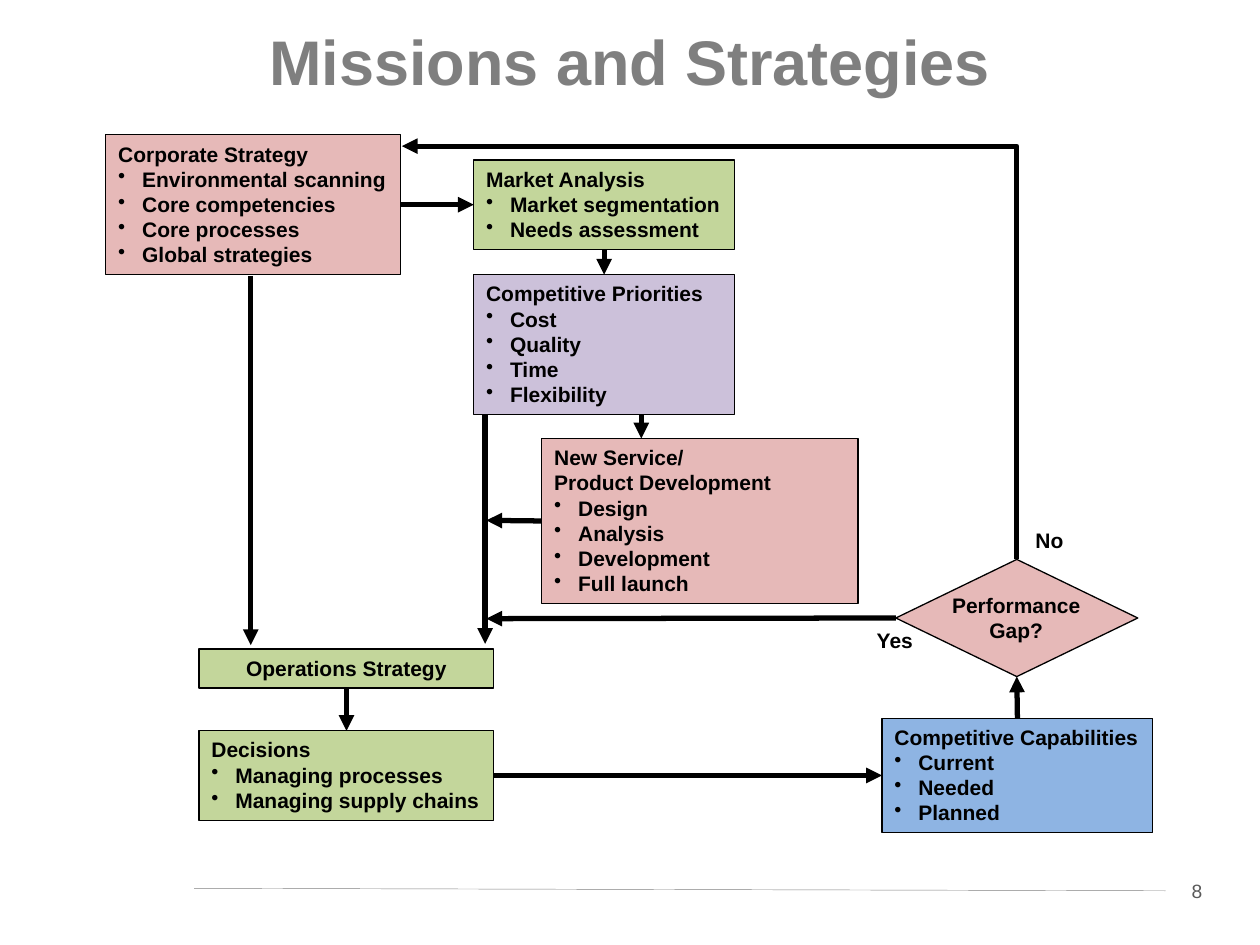
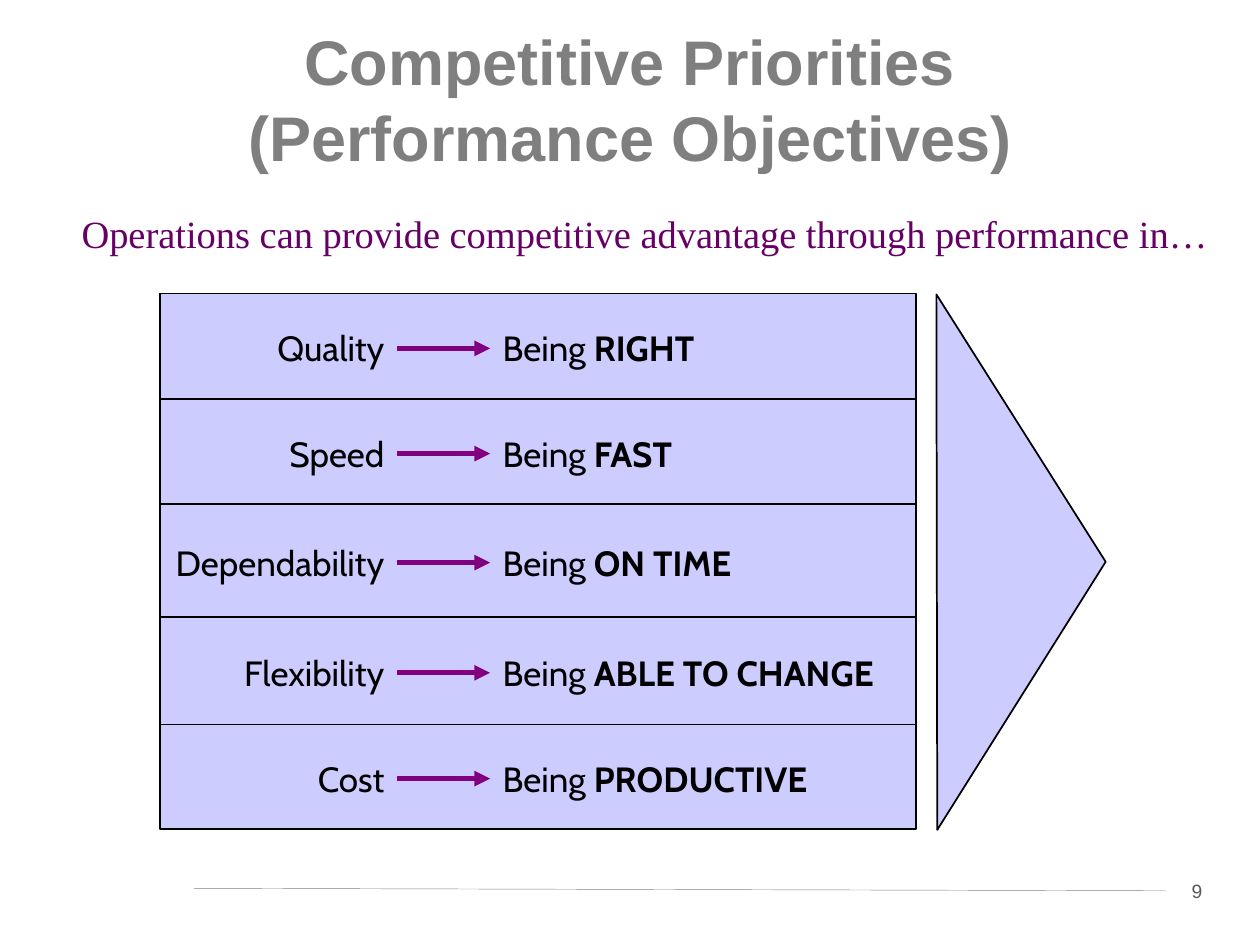
from lxml import etree
from pptx import Presentation
from pptx.dml.color import RGBColor
from pptx.enum.shapes import MSO_CONNECTOR, MSO_SHAPE
from pptx.enum.text import MSO_ANCHOR, MSO_AUTO_SIZE, PP_ALIGN
from pptx.oxml.ns import qn
from pptx.util import Inches, Pt

RECTANGLE = MSO_SHAPE.RECTANGLE
DIAMOND = MSO_SHAPE.DIAMOND
TRIANGLE = MSO_SHAPE.ISOSCELES_TRIANGLE
STRAIGHT = MSO_CONNECTOR.STRAIGHT
LEFT, CENTER, RIGHT = PP_ALIGN.LEFT, PP_ALIGN.CENTER, PP_ALIGN.RIGHT
TOP_SIDE, LEFT_SIDE, BOTTOM_SIDE, RIGHT_SIDE = range(4)

BLACK = RGBColor(0x00, 0x00, 0x00)
WHITE = RGBColor(0xFF, 0xFF, 0xFF)
TITLE_GRAY = RGBColor(0x7F, 0x7F, 0x7F)
RULE_GRAY = RGBColor(0x80, 0x80, 0x80)
NUMBER_GRAY = RGBColor(0x59, 0x59, 0x59)
ROSE = RGBColor(0xE6, 0xB9, 0xB8)
GREEN = RGBColor(0xC3, 0xD6, 0x9B)
LILAC = RGBColor(0xCC, 0xC1, 0xDA)
BLUE = RGBColor(0x8E, 0xB4, 0xE3)
LAVENDER = RGBColor(0xCC, 0xCC, 0xFF)
PURPLE = RGBColor(0x80, 0x00, 0x80)
PLUM = RGBColor(0x66, 0x00, 0x66)

TITLE_ONLY = 5
HEADING_FONT, ROW_FONT, LEAD_FONT = "Arial", "Cabin", "Times New Roman"
BULLET_INDENT = Inches(0.19)


def style_font(font, name, size, color, bold=False):
    font.name = name
    font.size = Pt(size)
    font.color.rgb = color
    font.bold = bold


def prepare_frame(frame):
    frame.word_wrap = True
    frame.auto_size = MSO_AUTO_SIZE.NONE
    frame.vertical_anchor = MSO_ANCHOR.TOP
    return frame


def write_line(shape, text, name, size, color, bold=False, align=LEFT):
    """Fill a shape with one paragraph and return that paragraph."""
    para = prepare_frame(shape.text_frame).paragraphs[0]
    para.text = text
    para.alignment = align
    for span in para.runs:
        style_font(span.font, name, size, color, bold)
    return para


def add_label(slide, area, text, name=HEADING_FONT, size=12, color=BLACK,
              bold=False, align=LEFT):
    box = slide.shapes.add_textbox(*map(Inches, area))
    return write_line(box, text, name, size, color, bold, align)


def add_block(slide, kind, area, fill, line_width):
    block = slide.shapes.add_shape(kind, *map(Inches, area))
    block.shadow.inherit = False
    block.fill.solid()
    block.fill.fore_color.rgb = fill
    if line_width:
        block.line.color.rgb = BLACK
        block.line.width = Pt(line_width)
    else:
        block.line.fill.background()
    return block


def add_list_block(slide, area, fill, headings, items):
    """Draw a framed box with bold heading lines above bulleted items."""
    block = add_block(slide, RECTANGLE, area, fill, 0.75)
    frame = prepare_frame(block.text_frame)
    lines = headings + items
    frame.text = "\n".join(lines)
    for index, para in enumerate(frame.paragraphs):
        para.alignment = LEFT
        if index >= len(headings):
            properties = para._p.get_or_add_pPr()
            properties.set("marL", str(BULLET_INDENT))
            properties.set("indent", str(-BULLET_INDENT))
            etree.SubElement(properties, qn("a:buChar")).set("char", "•")
        style_font(para.runs[0].font, HEADING_FONT, 12, BLACK, True)
    return block


def add_arrowhead(shape):
    line = shape.line._get_or_add_ln()
    etree.SubElement(line, qn("a:tailEnd")).set("type", "triangle")


def add_line(slide, start, end, color, width):
    """Join two ends, each a point (x, y) or a pair (shape, side)."""
    points = [end_point if isinstance(end_point[0], (int, float)) else (0, 0)
              for end_point in (start, end)]
    line = slide.shapes.add_connector(
        STRAIGHT, *(Inches(value) for point in points for value in point))
    for end_point, connect in ((start, line.begin_connect),
                               (end, line.end_connect)):
        if not isinstance(end_point[0], (int, float)):
            connect(*end_point)
    line.line.color.rgb = color
    line.line.width = Pt(width)
    etree.SubElement(line._element.spPr, qn("a:effectLst"))
    return line


def add_arrow(slide, start, end, color=BLACK):
    add_arrowhead(add_line(slide, start, end, color, 3))


def add_bent_arrow(slide, points):
    corners = [(Inches(x), Inches(y)) for x, y in points]
    builder = slide.shapes.build_freeform(*corners[0])
    builder.add_line_segments(corners[1:], close=False)
    arrow = builder.convert_to_shape()
    arrow.shadow.inherit = False
    arrow.fill.background()
    arrow.line.color.rgb = BLACK
    arrow.line.width = Pt(3)
    add_arrowhead(arrow)


def add_page(deck, title, number):
    """Add a slide with the shared title style, footer rule and page number."""
    page = deck.slides.add_slide(deck.slide_layouts[TITLE_ONLY])
    heading = page.shapes.title
    heading.left, heading.top = Inches(0.53), Inches(0.13)
    heading.width, heading.height = Inches(8.94), Inches(1.01)
    write_line(heading, title, HEADING_FONT, 36, TITLE_GRAY, True, CENTER)
    number_box = add_block(page, RECTANGLE, (9.25, 6.93, 0.5, 0.29), WHITE, 0)
    write_line(number_box, str(number), HEADING_FONT, 11, NUMBER_GRAY,
               align=CENTER)
    add_line(page, (1.54, 7.05), (9.25, 7.07), RULE_GRAY, 0.25)
    return page


def build_strategy_flow(deck):
    page = add_page(deck, "Missions and Strategies", 8)
    corporate = add_list_block(
        page, (0.84, 1.07, 2.34, 1.11), ROSE, ["Corporate Strategy"],
        ["Environmental scanning", "Core competencies", "Core processes",
         "Global strategies"])
    market = add_list_block(
        page, (3.76, 1.27, 2.07, 0.71), GREEN, ["Market Analysis"],
        ["Market segmentation", "Needs assessment"])
    priorities = add_list_block(
        page, (3.76, 2.18, 2.07, 1.11), LILAC, ["Competitive Priorities"],
        ["Cost", "Quality", "Time", "Flexibility"])
    development = add_list_block(
        page, (4.3, 3.48, 2.51, 1.31), ROSE,
        ["New Service/", "Product Development"],
        ["Design", "Analysis", "Development", "Full launch"])
    operations = add_block(page, RECTANGLE, (1.58, 5.15, 2.34, 0.31), GREEN,
                           0.75)
    write_line(operations, "Operations Strategy", HEADING_FONT, 12, BLACK,
               True, CENTER)
    decisions = add_list_block(
        page, (1.58, 5.8, 2.34, 0.71), GREEN, ["Decisions"],
        ["Managing processes", "Managing supply chains"])
    capabilities = add_list_block(
        page, (7, 5.7, 2.15, 0.91), BLUE, ["Competitive Capabilities"],
        ["Current", "Needed", "Planned"])
    gap = add_block(page, DIAMOND, (7.11, 4.44, 1.92, 0.93), ROSE, 0.75)
    add_label(page, (7.34, 4.65, 1.45, 0.5), "Performance Gap?", bold=True,
              align=CENTER)
    add_label(page, (8.12, 4.14, 0.5, 0.3), "No", bold=True)
    add_label(page, (6.86, 4.93, 0.6, 0.3), "Yes", bold=True)

    for start, end in (
        ((corporate, RIGHT_SIDE), (market, LEFT_SIDE)),
        ((market, BOTTOM_SIDE), (priorities, TOP_SIDE)),
        ((5.09, 3.29), (5.09, 3.48)),
        ((development, LEFT_SIDE), (3.86, 4.13)),
        ((gap, LEFT_SIDE), (3.86, 4.91)),
        ((1.99, 2.19), (1.99, 5.12)),
        ((3.85, 3.29), (3.85, 5.11)),
        ((operations, BOTTOM_SIDE), (decisions, TOP_SIDE)),
        ((decisions, RIGHT_SIDE), (capabilities, LEFT_SIDE)),
        ((capabilities, TOP_SIDE), (gap, BOTTOM_SIDE)),
    ):
        add_arrow(page, start, end)
    add_bent_arrow(page, [(8.07, 4.44), (8.07, 1.16), (3.19, 1.16)])


def add_objective_row(page, top, height, objective, result):
    add_block(page, RECTANGLE, (1.27, top, 6, height), LAVENDER, 1)
    text_top = top + (height - 0.41) / 2
    add_label(page, (0.64, text_top, 2.51, 0.43), objective, ROW_FONT, 20,
              align=RIGHT)
    para = add_label(page, (3.89, text_top, 3.25, 0.43), "Being", ROW_FONT, 20)
    emphasis = para.add_run()
    emphasis.text = f" {result}"
    style_font(emphasis.font, ROW_FONT, 20, BLACK, True)
    arrow_y = text_top + 0.22
    add_arrow(page, (3.15, arrow_y), (3.89, arrow_y), PURPLE)


def build_objectives(deck):
    page = add_page(deck,
                    "Competitive Priorities\v(Performance Objectives)", 9)
    add_label(page, (0.35, 1.62, 9.53, 0.47),
              "Operations can provide competitive advantage through "
              "performance in…", LEAD_FONT, 22, PLUM, align=CENTER)
    top = 2.33
    for height, objective, result in (
        (0.84, "Quality", "RIGHT"),
        (0.83, "Speed", "FAST"),
        (0.9, "Dependability", "ON TIME"),
        (0.85, "Flexibility", "ABLE TO CHANGE"),
        (0.83, "Cost", "PRODUCTIVE"),
    ):
        add_objective_row(page, top, height, objective, result)
        top += height
    pointer = add_block(page, TRIANGLE, (5.98, 3.79, 4.25, 1.34), LAVENDER, 1)
    pointer.rotation = 89.9


def main():
    deck = Presentation()
    deck.slide_width, deck.slide_height = Inches(10), Inches(7.5)
    build_strategy_flow(deck)
    build_objectives(deck)
    deck.save("out.pptx")


if __name__ == "__main__":
    main()
